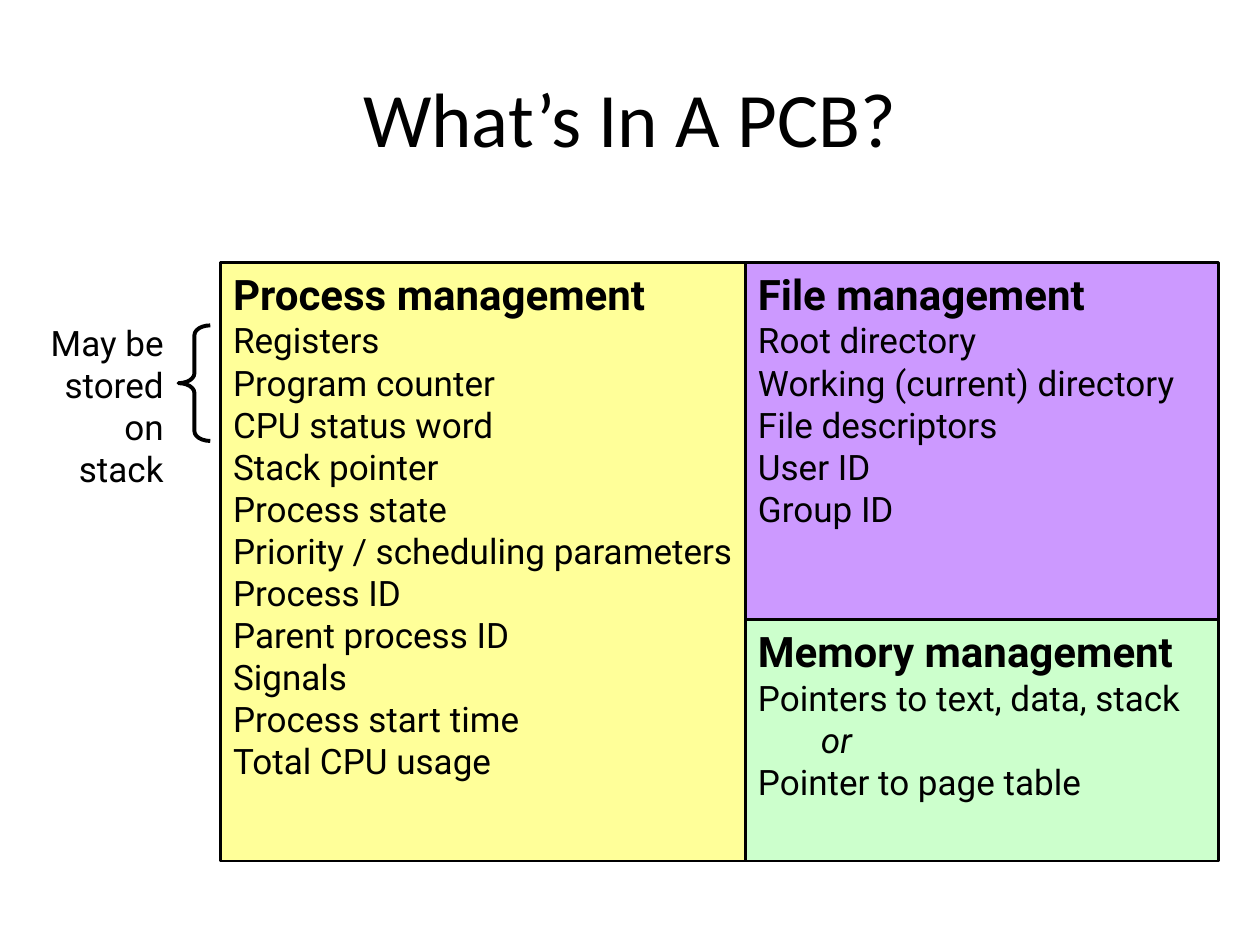
from pptx import Presentation
from pptx.dml.color import RGBColor
from pptx.enum.shapes import MSO_SHAPE
from pptx.enum.text import MSO_ANCHOR, PP_ALIGN
from pptx.util import Cm, Pt

COLORS = {
    "ink": "000000",
    "process": "FFFF99",
    "file": "CC99FF",
    "memory": "CCFFCC",
}


def color(name):
    return RGBColor.from_string(COLORS[name])


def write(p, text, size=20, font="Roboto", bold=False, italic=False,
          align=PP_ALIGN.LEFT):
    """Add text to a paragraph, turning newlines into line breaks."""
    p.alignment = align
    for i, line in enumerate(text.split("\n")):
        if i:
            p.add_line_break()
        r = p.add_run()
        r.text = line
        r.font.name = font
        r.font.size = Pt(size)
        r.font.bold = bold
        r.font.italic = italic
        r.font.color.rgb = color("ink")


prs = Presentation()
prs.slide_width, prs.slide_height = Cm(25.4), Cm(19.05)
s = prs.slides.add_slide(prs.slide_layouts[6])

# Title
tf = s.shapes.add_textbox(Cm(1.27), Cm(0.76), Cm(22.86), Cm(3.18)).text_frame
tf.word_wrap = True
tf.vertical_anchor = MSO_ANCHOR.MIDDLE
write(tf.paragraphs[0], "What’s In A PCB?", size=44, font="Calibri",
      align=PP_ALIGN.CENTER)

# Panels: one tall on the left, two stacked on the right
left, middle, right = 4.45, 15.03, 24.56
top, split, bottom = 5.29, 12.49, 17.36
panels = [
    ("file", middle, top, right, split, "File management",
     ["Root directory", "Working (current) directory", "File descriptors",
      "User ID", "Group ID"]),
    ("memory", middle, split, right, bottom, "Memory management",
     ["Pointers to text, data, stack", "\tor", "Pointer to page table"]),
    ("process", left, top, middle, bottom, "Process management",
     ["Registers", "Program counter", "CPU status word", "Stack pointer",
      "Process state", "Priority / scheduling parameters", "Process ID",
      "Parent process ID", "Signals", "Process start time",
      "Total CPU usage"]),
]
for fill, x1, y1, x2, y2, heading, items in panels:
    sp = s.shapes.add_shape(MSO_SHAPE.RECTANGLE, Cm(x1), Cm(y1),
                            Cm(x2 - x1), Cm(y2 - y1))
    sp.shadow.inherit = False
    sp.fill.solid()
    sp.fill.fore_color.rgb = color(fill)
    sp.line.color.rgb = color("ink")
    sp.line.width = Pt(1.5)
    tf = sp.text_frame
    tf.word_wrap = False
    tf.vertical_anchor = MSO_ANCHOR.TOP
    write(tf.paragraphs[0], heading, size=24, bold=True)
    for item in items:
        write(tf.add_paragraph(), item, italic=item.strip() == "or")

# Brace and its note
brace = s.shapes.add_shape(MSO_SHAPE.LEFT_BRACE, Cm(3.6), Cm(6.56),
                           Cm(0.64), Cm(2.33))
brace.shadow.inherit = False
brace.adjustments[0] = 0.31
brace.fill.background()
brace.line.color.rgb = color("ink")
brace.line.width = Pt(2.25)

tf = s.shapes.add_textbox(Cm(0.45), Cm(6.35), Cm(3.1), Cm(2.8)).text_frame
tf.word_wrap = True
write(tf.paragraphs[0], "May be\nstored\non stack", align=PP_ALIGN.RIGHT)

prs.save("out.pptx")
